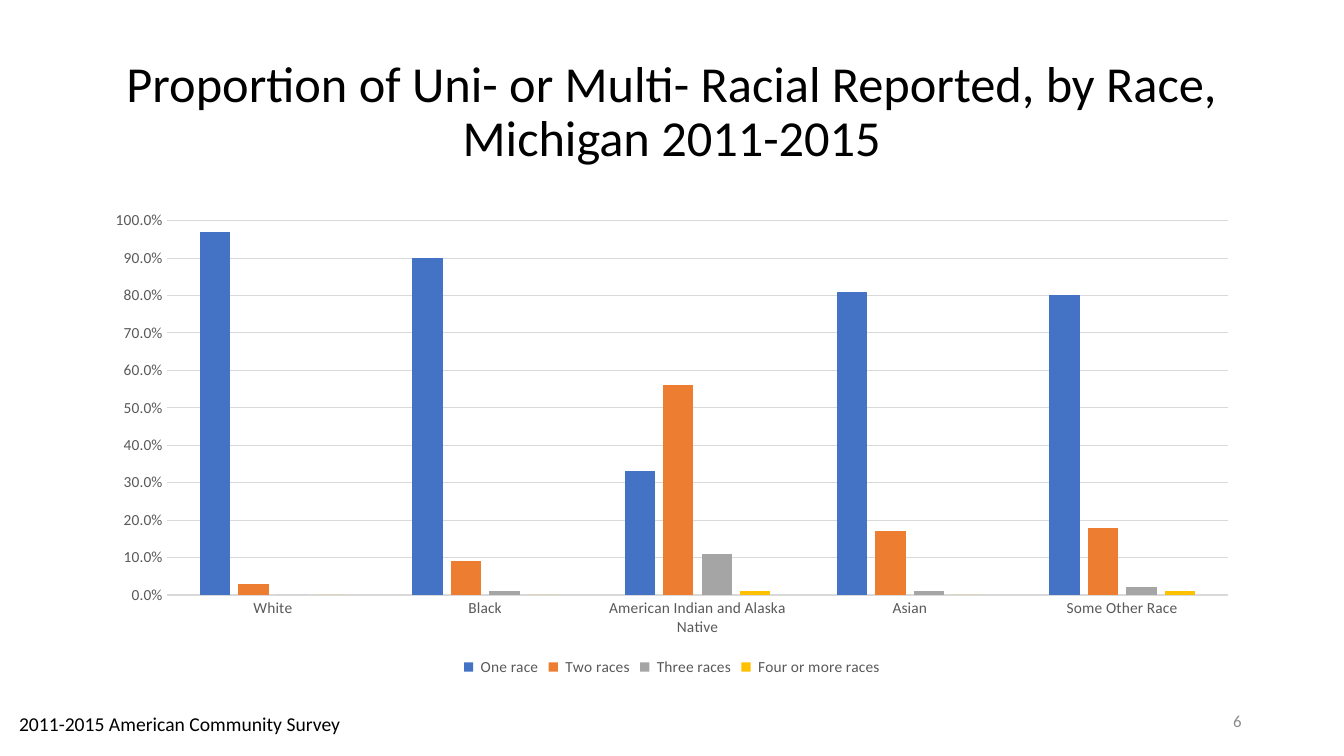
from dataclasses import dataclass

from pptx import Presentation
from pptx.chart.data import CategoryChartData
from pptx.dml.color import RGBColor
from pptx.enum.chart import XL_CHART_TYPE, XL_LEGEND_POSITION, XL_TICK_MARK
from pptx.enum.text import MSO_ANCHOR, PP_ALIGN
from pptx.util import Cm, Pt


@dataclass(frozen=True)
class Theme:
    font: str = "Calibri"
    ink: str = "000000"
    muted: str = "595959"
    number: str = "8C8C8C"
    rule: str = "D9D9D9"
    one_race: str = "4472C4"
    two_races: str = "ED7D31"
    three_races: str = "A5A5A5"
    four_races: str = "FFC000"
    title_size: int = 36
    source_size: int = 14
    number_size: int = 12
    chart_size: int = 11
    rule_width: float = 0.75


theme = Theme()


def style_font(font, size, color):
    for name, value in {"name": theme.font, "size": Pt(size)}.items():
        setattr(font, name, value)
    font.color.rgb = RGBColor.from_string(color)


def style_rule(line):
    line.color.rgb = RGBColor.from_string(theme.rule)
    line.width = Pt(theme.rule_width)


deck = Presentation()
deck.slide_width = Cm(33.87)
deck.slide_height = Cm(19.05)
page = deck.slides.add_slide(deck.slide_layouts[6])

texts = [
    ("Proportion of Uni- or Multi- Racial Reported, by Race, Michigan 2011-2015",
     (2.33, 1.01, 29.21, 3.68), theme.title_size, theme.ink,
     {"alignment": PP_ALIGN.CENTER, "line_spacing": 0.9}, MSO_ANCHOR.MIDDLE),
    ("6", (23.92, 17.66, 7.62, 1.01), theme.number_size, theme.number,
     {"alignment": PP_ALIGN.RIGHT}, MSO_ANCHOR.MIDDLE),
    ("2011-2015 American Community Survey",
     (0.23, 17.81, 8.69, 0.86), theme.source_size, theme.ink,
     {"alignment": PP_ALIGN.LEFT}, MSO_ANCHOR.TOP),
]
for text, place, size, color, para_format, anchor in texts:
    box = page.shapes.add_textbox(*map(Cm, place))
    box.text_frame.word_wrap = True
    box.text_frame.vertical_anchor = anchor
    para = box.text_frame.paragraphs[0]
    for name, value in para_format.items():
        setattr(para, name, value)
    span = para.add_run()
    span.text = text
    style_font(span.font, size, color)

race_counts = [
    (" One race", theme.one_race, (0.97, 0.9, 0.33, 0.81, 0.8)),
    (" Two races", theme.two_races, (0.03, 0.09, 0.56, 0.17, 0.18)),
    (" Three races", theme.three_races, (0, 0.01, 0.11, 0.01, 0.02)),
    (" Four or more races", theme.four_races, (0, 0, 0.01, 0, 0.01)),
]
chart_data = CategoryChartData(number_format="0.0%")
chart_data.categories = [
    "White", "Black", "American Indian and Alaska Native", "Asian", "Some Other Race",
]
for name, color, shares in race_counts:
    chart_data.add_series(name, shares)

chart = page.shapes.add_chart(
    XL_CHART_TYPE.COLUMN_CLUSTERED, *map(Cm, (2.33, 5.08, 29.21, 12.07)), chart_data
).chart
style_font(chart.font, theme.chart_size, theme.muted)
chart.has_title = False
chart.has_legend = True
chart.legend.position = XL_LEGEND_POSITION.BOTTOM
chart.legend.include_in_layout = False
style_font(chart.legend.font, theme.chart_size, theme.muted)

plot = chart.plots[0]
for name, value in {"gap_width": 219, "overlap": -27, "vary_by_categories": False}.items():
    setattr(plot, name, value)
for series, (name, color, shares) in zip(plot.series, race_counts):
    series.format.fill.solid()
    series.format.fill.fore_color.rgb = RGBColor.from_string(color)
    series.invert_if_negative = False

for axis in (chart.category_axis, chart.value_axis):
    axis.major_tick_mark = XL_TICK_MARK.NONE
    axis.minor_tick_mark = XL_TICK_MARK.NONE
    style_font(axis.tick_labels.font, theme.chart_size, theme.muted)
style_rule(chart.category_axis.format.line)

value_axis = chart.value_axis
value_format = {
    "minimum_scale": 0, "maximum_scale": 1, "major_unit": 0.1, "has_major_gridlines": True,
}
for name, value in value_format.items():
    setattr(value_axis, name, value)
value_axis.format.line.fill.background()
style_rule(value_axis.major_gridlines.format.line)
value_axis.tick_labels.number_format = "0.0%"
value_axis.tick_labels.number_format_is_linked = False

deck.save("out.pptx")
